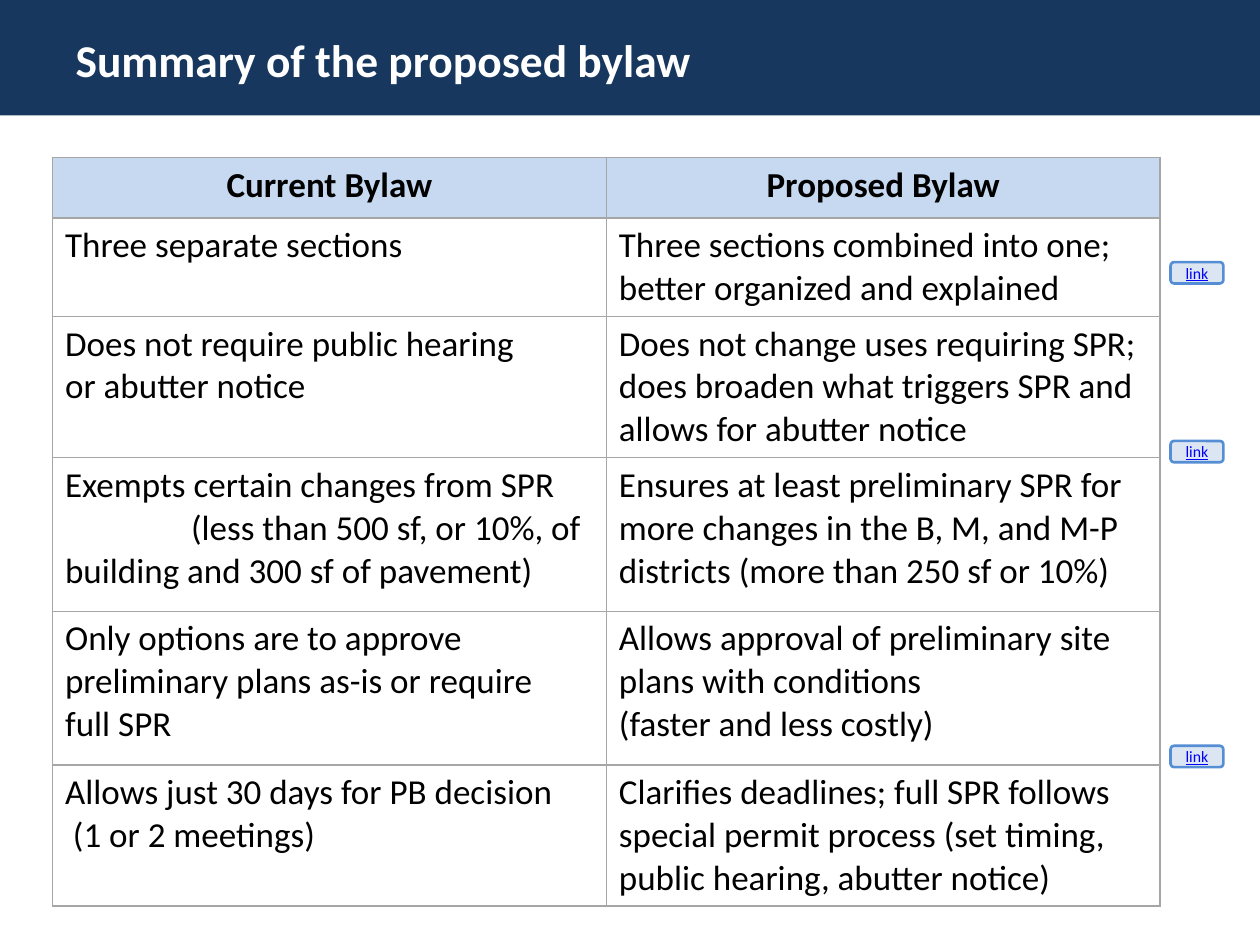
import pptx
import pptx.util
import pptx.dml.color
import pptx.enum.shapes
import pptx.enum.text
import pptx.oxml
import pptx.oxml.ns

Pt = pptx.util.Pt
ALIGN = pptx.enum.text.PP_ALIGN
ANCHOR = pptx.enum.text.MSO_ANCHOR
SHAPE = pptx.enum.shapes.MSO_SHAPE

HEAD = ("Current Bylaw", "Proposed Bylaw")
ROWS = (
    ("Three separate sections",
     "Three sections combined into one; better organized and explained"),
    ("Does not require public hearing\vor abutter notice",
     "Does not change uses requiring SPR; does broaden what triggers SPR "
     "and allows for abutter notice"),
    ("Exempts certain changes from SPR\n"
     "(less than 500 sf, or 10%, of building and 300 sf of pavement)",
     "Ensures at least preliminary SPR for more changes in the B, M, and M-P "
     "districts (more than 250 sf or 10%)"),
    ("Only options are to approve preliminary plans as-is or require\vfull SPR",
     "Allows approval of preliminary site plans with conditions\v"
     "(faster and less costly)"),
    ("Allows just 30 days for PB decision\n(1 or 2 meetings)",
     "Clarifies deadlines; full SPR follows special permit process "
     "(set timing, public hearing, abutter notice)"),
)
HEIGHTS = (34.6, 34.6, 57.6, 87.8, 87.8, 61.2)
INDENTS = {3: 72, 5: 4.5}
LINKS = (149.8, 252, 426.2)


def paint(color, value):
    """Set a colour format from a hex string."""
    color.rgb = pptx.dml.color.RGBColor.from_string(value)


def style(frame, size, value, align=ALIGN.LEFT, bold=False, under=False):
    """Format all text in a frame."""
    for para in frame.paragraphs:
        para.alignment = align
        for run in para.runs:
            font = run.font
            font.name, font.size = "Calibri", Pt(size)
            font.bold, font.underline = bold, under
            paint(font.color, value)


def block(slide, kind, box, fill, line=None):
    """Add a filled shape with an optional outline."""
    shape = slide.shapes.add_shape(kind, *map(Pt, box))
    shape.shadow.inherit = False
    shape.fill.solid()
    paint(shape.fill.fore_color, fill)
    if line:
        paint(shape.line.color, line)
        shape.line.width = Pt(1.5)
    else:
        shape.line.fill.background()
    return shape


def header(slide, text):
    """Place the title over its dark band."""
    title = slide.shapes.title
    title.left, title.top, title.width, title.height = map(Pt, (36, 6, 648, 56))
    frame = title.text_frame
    frame.text = text
    frame.vertical_anchor = ANCHOR.MIDDLE
    style(frame, 26, "FFFFFF", bold=True)
    band = block(slide, SHAPE.RECTANGLE, (0, 0, 720, 66), "17375E")
    title.element.addprevious(band.element)


def border(cell, value):
    """Draw one-point lines on all four sides of a cell."""
    props = cell._tc.get_or_add_tcPr()
    for side in "LRTB":
        props.append(pptx.oxml.parse_xml(
            f'<a:ln{side} {pptx.oxml.ns.nsdecls("a")} w="{Pt(1)}"><a:solidFill>'
            f'<a:srgbClr val="{value}"/></a:solidFill></a:ln{side}>'))


def fill_cell(cell, text, head, indent):
    """Write and format one table cell."""
    frame = cell.text_frame
    frame.text = text
    align = ALIGN.CENTER if head else ALIGN.LEFT
    style(frame, 20, "000000", align, bold=head)
    for para in frame.paragraphs[1:]:
        para._p.get_or_add_pPr().set("indent", str(Pt(indent)))
    border(cell, "A6A6A6")
    if head:
        cell.fill.solid()
        paint(cell.fill.fore_color, "C6D9F1")
    else:
        cell.fill.background()


def grid(slide):
    """Build the table that compares the bylaws."""
    data = (HEAD, *ROWS)
    frame = slide.shapes.add_table(
        len(data), len(HEAD), Pt(30), Pt(90), Pt(633), Pt(423.4))
    table = frame.table
    table.horz_banding = False
    for r, texts in enumerate(data):
        table.rows[r].height = Pt(HEIGHTS[r])
        for c, text in enumerate(texts):
            fill_cell(table.cell(r, c), text, r == 0, INDENTS.get(r, 0))
    frame.height = Pt(423.4)


def button(slide, top):
    """Add a small link button beside the table."""
    shape = block(slide, SHAPE.ROUNDED_RECTANGLE,
                  (668.9, top, 30.2, 12.2), "DCE6F2", "558ED5")
    frame = shape.text_frame
    frame.text = "link"
    frame.margin_top = frame.margin_bottom = 0
    frame.vertical_anchor = ANCHOR.MIDDLE
    style(frame, 9, "0000FF", ALIGN.CENTER, under=True)


def main():
    """Build and save the slide."""
    deck = pptx.Presentation()
    deck.slide_width, deck.slide_height = Pt(720), Pt(540)
    slide = deck.slides.add_slide(deck.slide_layouts[5])
    header(slide, "Summary of the proposed bylaw")
    grid(slide)
    for top in LINKS:
        button(slide, top)
    deck.save("out.pptx")


if __name__ == "__main__":
    main()
